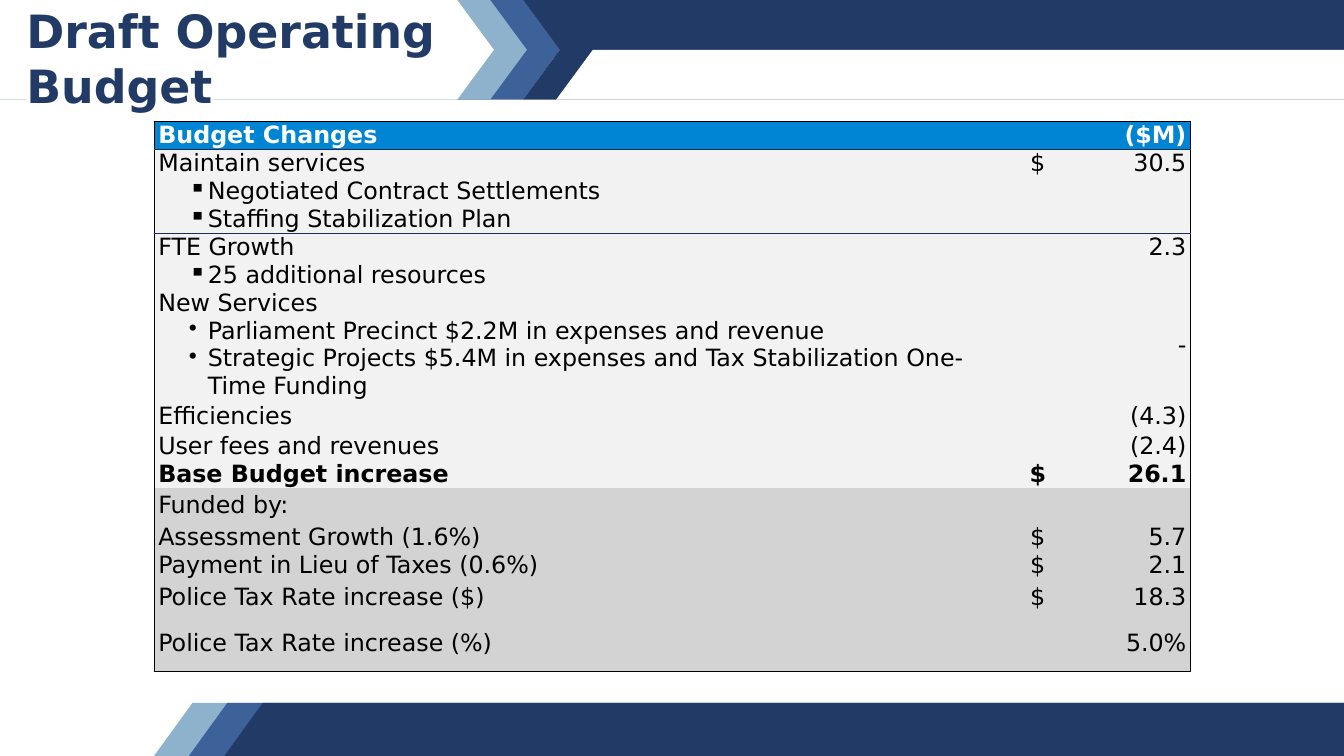
import lxml.etree
import pptx
import pptx.dml.color
import pptx.enum.text
import pptx.oxml.ns
import pptx.util

Inches = pptx.util.Inches
Pt = pptx.util.Pt
ANCHOR = pptx.enum.text.MSO_ANCHOR
ALIGN = pptx.enum.text.PP_ALIGN

FONT = "DejaVu Sans"
COLOURS = {
    "navy": "223A66", "blue": "3D6299", "pale": "8FB2CC", "white": "FFFFFF",
    "black": "000000", "heading": "0084D4", "rule": "1B2C59",
    "changes": "F2F2F2", "funding": "D3D3D3",
}
SLIDE_WIDTH, SLIDE_HEIGHT = 21.99, 12.37

# Height, fill, label, bullet mark, bullets, currency sign, amount
BUDGET_ROWS = [
    (0.46, "heading", "Budget Changes", "", [], "", "($M)"),
    (1.38, "changes", "Maintain services", "▪",
     ["Negotiated Contract Settlements", "Staffing Stabilization Plan"], "$", "30.5"),
    (0.92, "changes", "FTE Growth", "▪", ["25 additional resources"], "", "2.3"),
    (1.38, "changes", "New Services", "•",
     ["Parliament Precinct $2.2M in expenses and revenue",
      "Strategic Projects $5.4M in expenses and Tax Stabilization One-Time Funding"], "", "-"),
    (0.52, "changes", "Efficiencies", "", [], "", "(4.3)"),
    (0.46, "changes", "User fees and revenues", "", [], "", "(2.4)"),
    (0.46, "changes", "Base Budget increase", "", [], "$", "26.1"),
    (0.58, "funding", "Funded by:", "", [], "", ""),
    (0.46, "funding", "Assessment Growth (1.6%)", "", [], "$", "5.7"),
    (0.46, "funding", "Payment in Lieu of Taxes (0.6%)", "", [], "$", "2.1"),
    (0.58, "funding", "Police Tax Rate increase ($)", "", [], "$", "18.3"),
    (0.92, "funding", "Police Tax Rate increase (%)", "", [], "", "5.0%"),
]
BOLD_LABELS = {"Budget Changes", "Base Budget increase"}
TOP_ANCHORED = {"Maintain services", "FTE Growth"}


def rgb(name):
    return pptx.dml.color.RGBColor.from_string(COLOURS[name])


def add_element(parent, tag, **attributes):
    return lxml.etree.SubElement(parent, pptx.oxml.ns.qn(tag), attributes)


def format_font(font, size, colour, bold):
    font.name = FONT
    font.size = Pt(size)
    font.bold = bold
    font.color.rgb = rgb(colour)


def add_band(slide, colour, top, bottom, upper_edge, lower_edge):
    """Draw a four-sided band from the x positions of its upper and lower edges."""
    corners = [(upper_edge[0], top), (upper_edge[1], top),
               (lower_edge[1], bottom), (lower_edge[0], bottom)]
    points = [(Inches(x), Inches(y)) for x, y in corners]
    builder = slide.shapes.build_freeform(*points[0])
    builder.add_line_segments(points[1:], close=True)
    shape = builder.convert_to_shape()
    shape.shadow.inherit = False
    shape.fill.solid()
    shape.fill.fore_color.rgb = rgb(colour)
    shape.line.fill.background()


def add_header(slide, left, top, width, height):
    slant = 0.6
    right, middle, bottom = left + width, top + height / 2, top + height
    add_band(slide, "navy", top, middle, (left, right), (left, right))
    # Layers whose right ends form the chevron
    for colour, reach in (("blue", 9.16), ("pale", 8.62), ("white", 8.08)):
        tip = left + reach
        wide, narrow = (left, tip), (left, tip - slant)
        add_band(slide, colour, top, middle, narrow, wide)
        add_band(slide, colour, middle, bottom, wide, narrow)
    # Lower arm of the navy chevron
    for colour, reach in (("navy", 9.16), ("white", 9.7)):
        tip = left + reach
        add_band(slide, colour, middle, bottom, (tip, right), (tip - slant, right))


def add_footer(slide, left, top, width, height):
    slant = 0.63
    right = left + width
    for colour, offset in (("pale", 0), ("blue", 0.57), ("navy", 1.15)):
        start = left + offset
        add_band(slide, colour, top, top + height, (start + slant, right), (start, right))


def add_title(slide, left, top, width, height):
    title = slide.shapes.title
    title.left, title.top = Inches(left), Inches(top)
    title.width, title.height = Inches(width), Inches(height)
    slide.shapes.element.append(title.element)  # in front of the header
    text_frame = title.text_frame
    text_frame.text = "Draft Operating Budget"
    text_frame.word_wrap = True
    text_frame.auto_size = pptx.enum.text.MSO_AUTO_SIZE.NONE
    text_frame.vertical_anchor = ANCHOR.TOP
    paragraph = text_frame.paragraphs[0]
    paragraph.alignment = ALIGN.LEFT
    run = paragraph.runs[0]
    format_font(run.font, 54, "navy", True)
    # White highlight, placed right after the text colour
    properties = run.font.fill._xPr
    highlight = add_element(properties, "a:highlight")
    add_element(highlight, "a:srgbClr", val=COLOURS["white"])
    properties.find(pptx.oxml.ns.qn("a:solidFill")).addnext(highlight)


def add_bullet(paragraph, mark):
    paragraph.level = 1
    properties = paragraph._p.get_or_add_pPr()
    properties.set("marL", str(Inches(0.81)))
    properties.set("indent", str(Inches(-0.31)))
    add_element(properties, "a:buChar", char=mark)


def add_border(cell, side, colour):
    line = add_element(cell._tc.get_or_add_tcPr(), "a:ln" + side, w=str(Pt(1)))
    fill = add_element(line, "a:solidFill")
    add_element(fill, "a:srgbClr", val=COLOURS[colour])


def fill_cell(cell, lines, mark, fill, alignment, anchor, bold):
    cell.margin_left = cell.margin_right = Inches(0.07)
    cell.margin_top = cell.margin_bottom = 0
    cell.vertical_anchor = anchor
    cell.fill.solid()
    cell.fill.fore_color.rgb = rgb(fill)
    cell.text_frame.text = "\n".join(lines)
    for index, paragraph in enumerate(cell.text_frame.paragraphs):
        paragraph.alignment = alignment
        if index:
            add_bullet(paragraph, mark)
        for run in paragraph.runs:
            format_font(run.font, 28, "white" if fill == "heading" else "black", bold)


def add_budget_table(slide, left, top, width):
    heights = [row[0] for row in BUDGET_ROWS]
    frame = slide.shapes.add_table(len(heights), 3, Inches(left), Inches(top),
                                   Inches(width), Inches(sum(heights)))
    table = frame.table
    table.first_row = table.horz_banding = False
    # Plain table style without a grid
    style = table._tbl.tblPr.find(pptx.oxml.ns.qn("a:tableStyleId"))
    style.text = "{2D5ABB26-0587-4C30-8999-92F81FD0307C}"
    for column, column_width in zip(table.columns, (width - 2.87, 0.74, 2.13)):
        column.width = Inches(column_width)

    last = len(heights) - 1
    for index, (height, fill, label, mark, bullets, sign, amount) in enumerate(BUDGET_ROWS):
        table.rows[index].height = Inches(height)
        bold = label in BOLD_LABELS
        side_anchor = ANCHOR.TOP if label in TOP_ANCHORED else ANCHOR.MIDDLE
        contents = [([label] + bullets, ALIGN.LEFT, ANCHOR.MIDDLE),
                    ([sign], ALIGN.CENTER, side_anchor),
                    ([amount], ALIGN.RIGHT, ANCHOR.BOTTOM if index == 0 else side_anchor)]
        for column, (lines, alignment, anchor) in enumerate(contents):
            cell = table.cell(index, column)
            if column == 0:
                add_border(cell, "L", "black")
            if column == 2:
                add_border(cell, "R", "black")
            if index < 2:
                add_border(cell, "T", "rule" if index else "black")
            if index in (0, last):
                add_border(cell, "B", "black" if index else "rule")
            fill_cell(cell, lines, mark, fill, alignment, anchor, bold)


def main():
    presentation = pptx.Presentation()
    presentation.slide_width = Inches(SLIDE_WIDTH)
    presentation.slide_height = Inches(SLIDE_HEIGHT)
    slide = presentation.slides.add_slide(presentation.slide_layouts[5])
    add_footer(slide, 2.52, 11.5, SLIDE_WIDTH - 2.52, 0.87)
    add_header(slide, 0, 0, SLIDE_WIDTH, 1.63)
    add_budget_table(slide, 2.52, 1.98, 16.96)
    add_title(slide, 0.33, 0, 8.6, 1.09)
    presentation.save("out.pptx")


if __name__ == "__main__":
    main()
